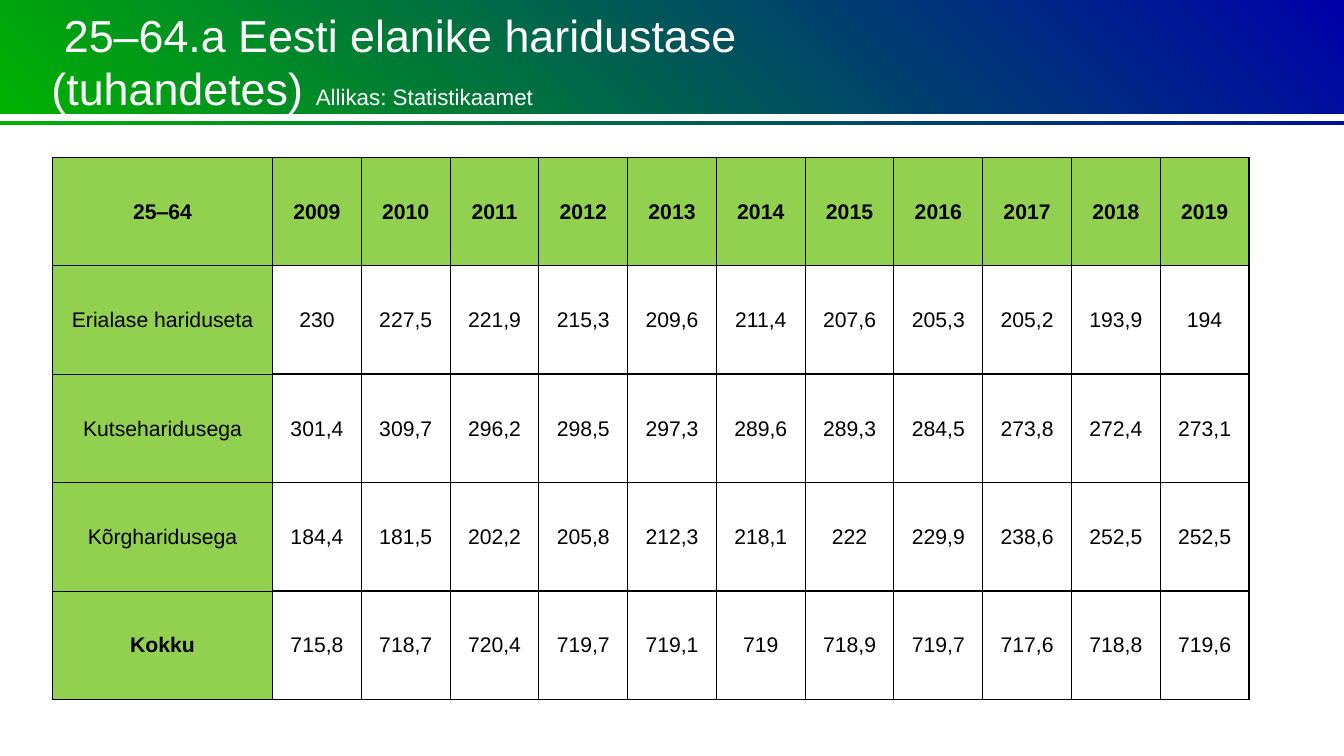
import pptx
import pptx.dml.color
import pptx.enum.shapes
import pptx.enum.text
import pptx.oxml
import pptx.oxml.ns
import pptx.util


def colour(hex_value):
    return pptx.dml.color.RGBColor.from_string(hex_value)


def apply(target, values):
    for name, value in values.items():
        setattr(target, name, value)


class Slide:
    font = "Arial"
    ink, paper, label_fill = "000000", "FFFFFF", "92D050"
    band = ("0000AA", "00B300")

    def __init__(self, deck):
        self.deck = deck
        self.page = deck.slides.add_slide(deck.slide_layouts[6])

    def area(self, left, top, width, height):
        across, down = self.deck.slide_width / 100, self.deck.slide_height / 100
        return [round(share * unit) for share, unit in
                zip((left, top, width, height), (across, down, across, down))]

    def add_text(self, paragraph, text, size, ink, bold=False):
        run = paragraph.add_run()
        run.text = text
        apply(run.font, {"name": self.font, "size": pptx.util.Pt(size), "bold": bold})
        run.font.color.rgb = colour(ink)

    def header(self, *place):
        header = self.page.shapes.add_shape(
            pptx.enum.shapes.MSO_SHAPE.RECTANGLE, *self.area(*place))
        header.shadow.inherit = False
        header.line.fill.background()
        header.fill.gradient()
        header.fill.gradient_angle = 225
        for stop, shade, position in zip(header.fill.gradient_stops, self.band, (0, 1)):
            stop.color.rgb = colour(shade)
            stop.position = position

    def rule(self, top, weight):
        left, y, width, _ = self.area(0, top, 100, 0)
        rule = self.page.shapes.add_connector(
            pptx.enum.shapes.MSO_CONNECTOR.STRAIGHT, left, y, left + width, y)
        rule.line.color.rgb = colour(self.paper)
        rule.line.width = pptx.util.Pt(weight)
        rule._element.spPr.append(pptx.oxml.parse_xml(
            f'<a:effectLst {pptx.oxml.ns.nsdecls("a")}/>'))

    def title(self, place, parts):
        frame = self.page.shapes.add_textbox(*self.area(*place)).text_frame
        inset = pptx.util.Inches(0.08)
        apply(frame, {
            "word_wrap": True,
            "vertical_anchor": pptx.enum.text.MSO_ANCHOR.MIDDLE,
            "margin_left": inset, "margin_right": inset,
            "margin_top": inset, "margin_bottom": inset,
        })
        for text, size in parts:
            self.add_text(frame.paragraphs[0], text, size, self.paper)

    def borders(self, cell, weights):
        properties = cell._tc.get_or_add_tcPr()
        for index, (side, weight) in enumerate(weights.items()):
            properties.insert(index, pptx.oxml.parse_xml(
                f'<a:{side} {pptx.oxml.ns.nsdecls("a")} w="{pptx.util.Pt(weight)}">'
                f'<a:solidFill><a:srgbClr val="{self.ink}"/></a:solidFill></a:{side}>'))

    def table(self, place, rows, label_columns):
        left, top, width, height = self.area(*place)
        last_row, years = len(rows) - 1, len(rows[0]) - 1
        table = self.page.shapes.add_table(
            len(rows), years + 1, left, top, width, height).table
        apply(table, {"first_row": False, "horz_banding": False})
        year_width = width / (years + label_columns)
        for c, column in enumerate(table.columns):
            column.width = round(year_width * (1 if c else label_columns))
        for r, row in enumerate(rows):
            table.rows[r].height = round(height / len(rows))
            for c, text in enumerate(row):
                self.cell(table.cell(r, c), text,
                          shaded=r == 0 or c == 0,
                          bold=r == 0 or (c == 0 and r == last_row),
                          thin_top=c == 0 and r > 1,
                          thin_bottom=c == 0 and 0 < r < last_row)

    def cell(self, cell, text, shaded, bold, thin_top, thin_bottom):
        inset = pptx.util.Inches(0.01)
        apply(cell, {
            "vertical_anchor": pptx.enum.text.MSO_ANCHOR.MIDDLE,
            "margin_left": inset, "margin_right": inset,
            "margin_top": inset, "margin_bottom": 0,
        })
        if shaded:
            cell.fill.solid()
            cell.fill.fore_color.rgb = colour(self.label_fill)
        else:
            cell.fill.background()
        self.borders(cell, {"lnL": 1, "lnR": 1,
                            "lnT": 0.5 if thin_top else 1,
                            "lnB": 0.5 if thin_bottom else 1})
        paragraph = cell.text_frame.paragraphs[0]
        paragraph.alignment = pptx.enum.text.PP_ALIGN.CENTER
        self.add_text(paragraph, text, 15.1, self.ink, bold)


def main():
    deck = pptx.Presentation()
    apply(deck, {"slide_width": pptx.util.Inches(13.33),
                 "slide_height": pptx.util.Inches(7.5)})
    education = [
        ["25‒64"] + [str(year) for year in range(2009, 2020)],
        ["Erialase hariduseta", "230", "227,5", "221,9", "215,3", "209,6", "211,4",
         "207,6", "205,3", "205,2", "193,9", "194"],
        ["Kutseharidusega", "301,4", "309,7", "296,2", "298,5", "297,3", "289,6",
         "289,3", "284,5", "273,8", "272,4", "273,1"],
        ["Kõrgharidusega", "184,4", "181,5", "202,2", "205,8", "212,3", "218,1",
         "222", "229,9", "238,6", "252,5", "252,5"],
        ["Kokku", "715,8", "718,7", "720,4", "719,7", "719,1", "719",
         "718,9", "719,7", "717,6", "718,8", "719,6"],
    ]
    slide = Slide(deck)
    slide.header(-0.15, -0.4, 100.3, 16.93)
    slide.rule(15.5, 5)
    slide.title((3.23, -0.4, 69.92, 16.93), [
        (" 25‒64.a Eesti elanike haridustase (tuhandetes) ", 32),
        ("Allikas: Statistikaamet", 16),
    ])
    slide.table((3.9, 20.8, 89.05, 71.73), education, 2.48)
    deck.save("out.pptx")


if __name__ == "__main__":
    main()
